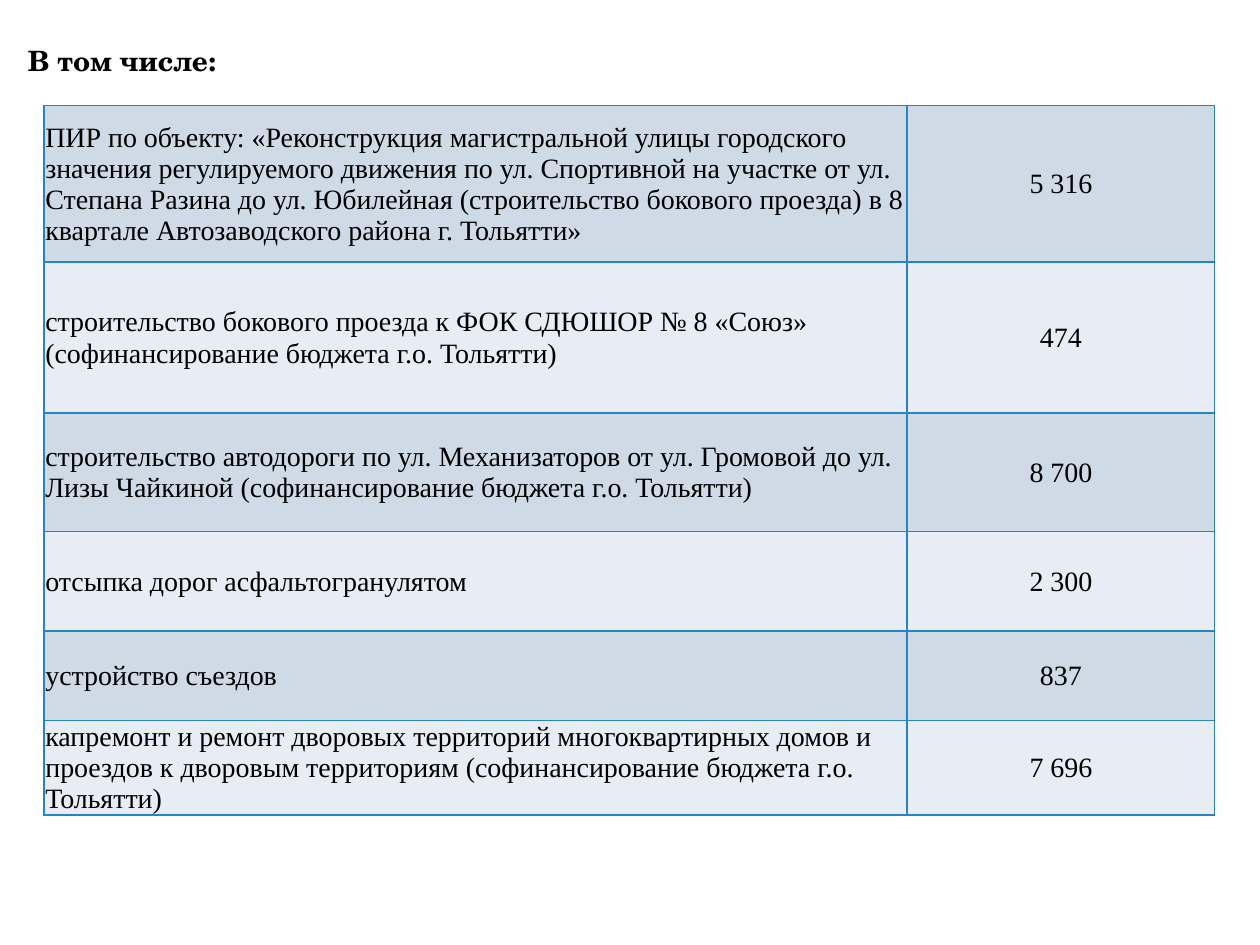
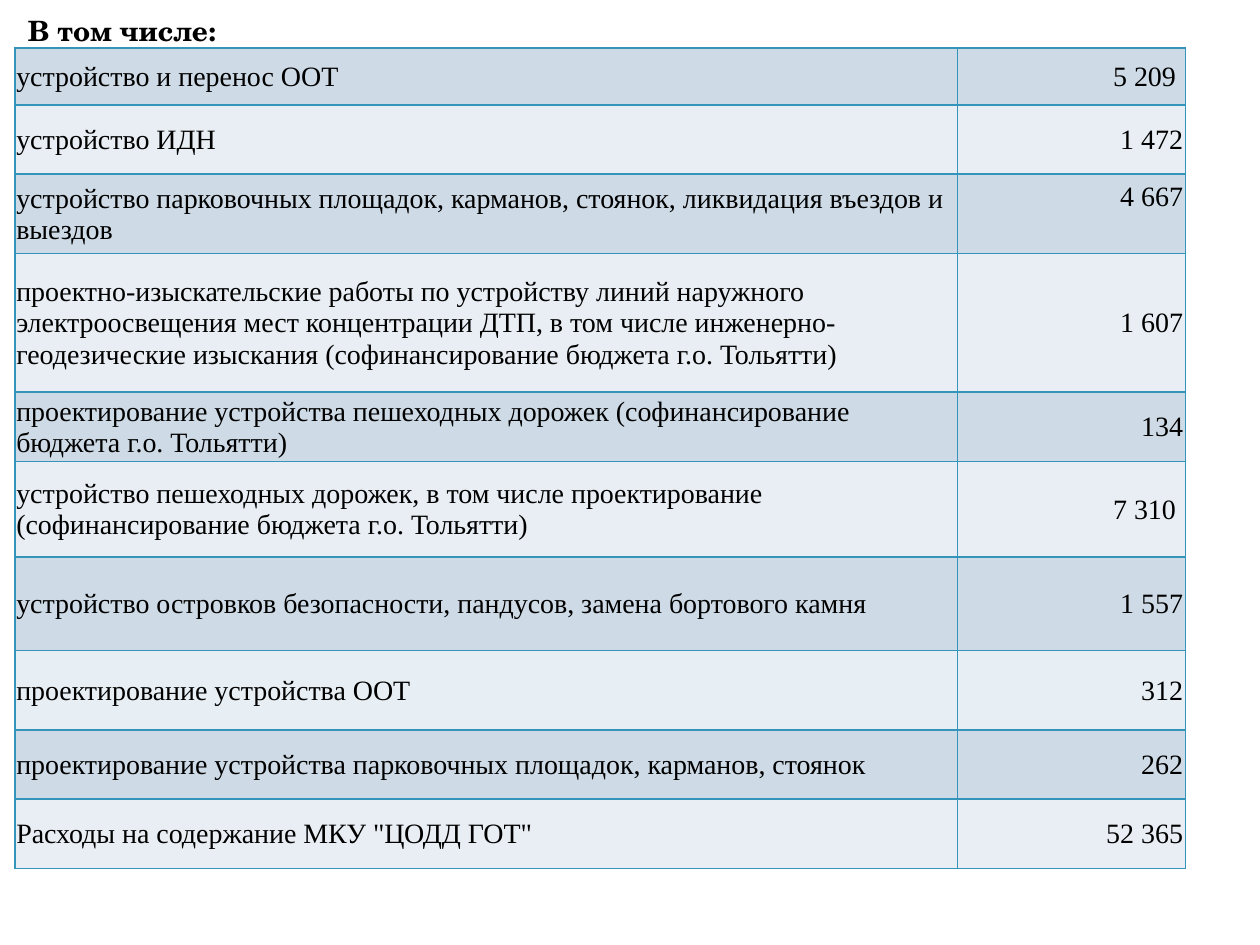
from lxml import etree
from pptx import Presentation
from pptx.dml.color import RGBColor
from pptx.enum import text
from pptx.oxml import ns
from pptx.util import Pt

COLORS = {
    "text": "000000",
    "band": "CEDBE6",
    "light_lilac": "E8EDF5",
    "light_gray": "E8EEF3",
    "light_blue": "E8EFF4",
    "blue_line": "2683C6",
    "teal_line": "3494BA",
}
TITLE = "В том числе:"
TITLE_FONT = "TeX Gyre Schola"
BODY_FONT = "Times New Roman"
SIZE = 16
CELL_INSET = 0.72

# Each row: description, value, height in points
ROAD_WORKS = [
    ("ПИР по объекту: «Реконструкция магистральной улицы городского значения "
     "регулируемого движения по ул. Спортивной на участке от ул. Степана Разина "
     "до ул. Юбилейная (строительство бокового проезда) в 8 квартале "
     "Автозаводского района г. Тольятти»", "5 316", 89.3),
    ("строительство бокового проезда к ФОК СДЮШОР № 8 «Союз» "
     "(софинансирование бюджета г.о. Тольятти)", "474", 86.4),
    ("строительство автодороги по ул. Механизаторов от ул. Громовой до ул. "
     "Лизы Чайкиной (софинансирование бюджета г.о. Тольятти)", "8 700", 67.7),
    ("отсыпка дорог асфальтогранулятом", "2 300", 56.9),
    ("устройство съездов", "837", 51.1),
    ("капремонт и ремонт дворовых территорий многоквартирных домов и проездов "
     "к дворовым территориям (софинансирование бюджета г.о. Тольятти)",
     "7 696", 53.5),
]
TRAFFIC_WORKS = [
    ("устройство и перенос ООТ", "5 209", 32.4),
    ("устройство ИДН", "1 472", 39.6),
    ("устройство парковочных площадок, карманов, стоянок, ликвидация въездов "
     "и выездов", "4 667", 45.4),
    ("проектно-изыскательские работы по устройству линий наружного "
     "электроосвещения мест концентрации ДТП, в том числе "
     "инженерно-геодезические изыскания (софинансирование бюджета "
     "г.о. Тольятти)", "1 607", 79.2),
    ("проектирование устройства пешеходных дорожек (софинансирование бюджета "
     "г.о. Тольятти)", "134", 39.6),
    ("устройство пешеходных дорожек, в том числе проектирование "
     "(софинансирование бюджета г.о. Тольятти)", "7 310", 54.7),
    ("устройство островков безопасности, пандусов, замена бортового камня",
     "1 557", 53.3),
    ("проектирование устройства ООТ", "312", 45.4),
    ("проектирование устройства парковочных площадок, карманов, стоянок",
     "262", 39.6),
    ('Расходы на содержание МКУ "ЦОДД ГОТ"', "52 365", 39.6),
]


def rgb(name):
    return RGBColor.from_string(COLORS[name])


def write(tf, content, font=BODY_FONT, bold=False,
          align=text.PP_ALIGN.LEFT, spacing=None):
    p = tf.paragraphs[0]
    p.alignment = align
    if spacing:
        p.line_spacing = spacing
    r = p.add_run()
    r.text = content
    r.font.name = font
    r.font.size = Pt(SIZE)
    r.font.bold = bold
    r.font.color.rgb = rgb("text")


def add_title(s, height):
    sp = s.shapes.title
    sp.left, sp.top, sp.width, sp.height = Pt(0), Pt(0), Pt(720), Pt(height)
    tf = sp.text_frame
    tf.auto_size = text.MSO_AUTO_SIZE.NONE
    tf.word_wrap = True
    tf.vertical_anchor = text.MSO_ANCHOR.MIDDLE
    tf.margin_left = Pt(16)
    write(tf, TITLE, font=TITLE_FONT, bold=True, spacing=0.9)


def border(cell, color):
    tc_pr = cell._tc.get_or_add_tcPr()
    for side in ("lnL", "lnR", "lnT", "lnB"):
        ln = etree.SubElement(tc_pr, ns.qn("a:" + side), w=str(Pt(1)))
        fill = etree.SubElement(ln, ns.qn("a:solidFill"))
        etree.SubElement(fill, ns.qn("a:srgbClr"), val=COLORS[color])


def fill_cell(cell, content, fill, line, align):
    cell.margin_left = cell.margin_right = cell.margin_top = Pt(CELL_INSET)
    cell.margin_bottom = Pt(0)
    cell.vertical_anchor = text.MSO_ANCHOR.MIDDLE
    border(cell, line)
    cell.fill.solid()
    cell.fill.fore_color.rgb = rgb(fill)
    write(cell.text_frame, content, align=align)


def add_cost_table(s, rows, left, top, widths, line, light, value_align):
    heights = [height for _, _, height in rows]
    frame = s.shapes.add_table(len(rows), len(widths), Pt(left), Pt(top),
                               Pt(sum(widths)), Pt(sum(heights)))
    table = frame.table
    table.first_row = table.horz_banding = False
    for column, width in zip(table.columns, widths):
        column.width = Pt(width)
    for i, (work, cost, height) in enumerate(rows):
        table.rows[i].height = Pt(height)
        fill = light if i % 2 else "band"
        fill_cell(table.cell(i, 0), work, fill, line, text.PP_ALIGN.LEFT)
        fill_cell(table.cell(i, 1), cost, fill, line, value_align)
    return table


def main():
    prs = Presentation()
    prs.slide_width, prs.slide_height = Pt(720), Pt(540)
    layout = prs.slide_layouts[5]

    # Road construction costs
    s = prs.slides.add_slide(layout)
    add_title(s, 71.3)
    add_cost_table(s, ROAD_WORKS, 25.2, 60.3, (493.2, 175.7),
                   "blue_line", "light_lilac", text.PP_ALIGN.CENTER)

    # Traffic management costs
    s = prs.slides.add_slide(layout)
    add_title(s, 37.4)
    table = add_cost_table(s, TRAFFIC_WORKS, 8.6, 27.5, (538.6, 130.3),
                           "teal_line", "light_gray", text.PP_ALIGN.RIGHT)

    # Values set apart from the rest of their column
    for row in range(len(TRAFFIC_WORKS)):
        table.cell(row, 1).margin_right = Pt(5.5 if row in (0, 5) else 1.5)
    parking_cost = table.cell(2, 1)
    parking_cost.vertical_anchor = text.MSO_ANCHOR.TOP
    parking_cost.margin_top = Pt(4.5)
    for column in range(2):
        table.cell(7, column).fill.fore_color.rgb = rgb("light_blue")

    prs.save("out.pptx")


if __name__ == "__main__":
    main()
